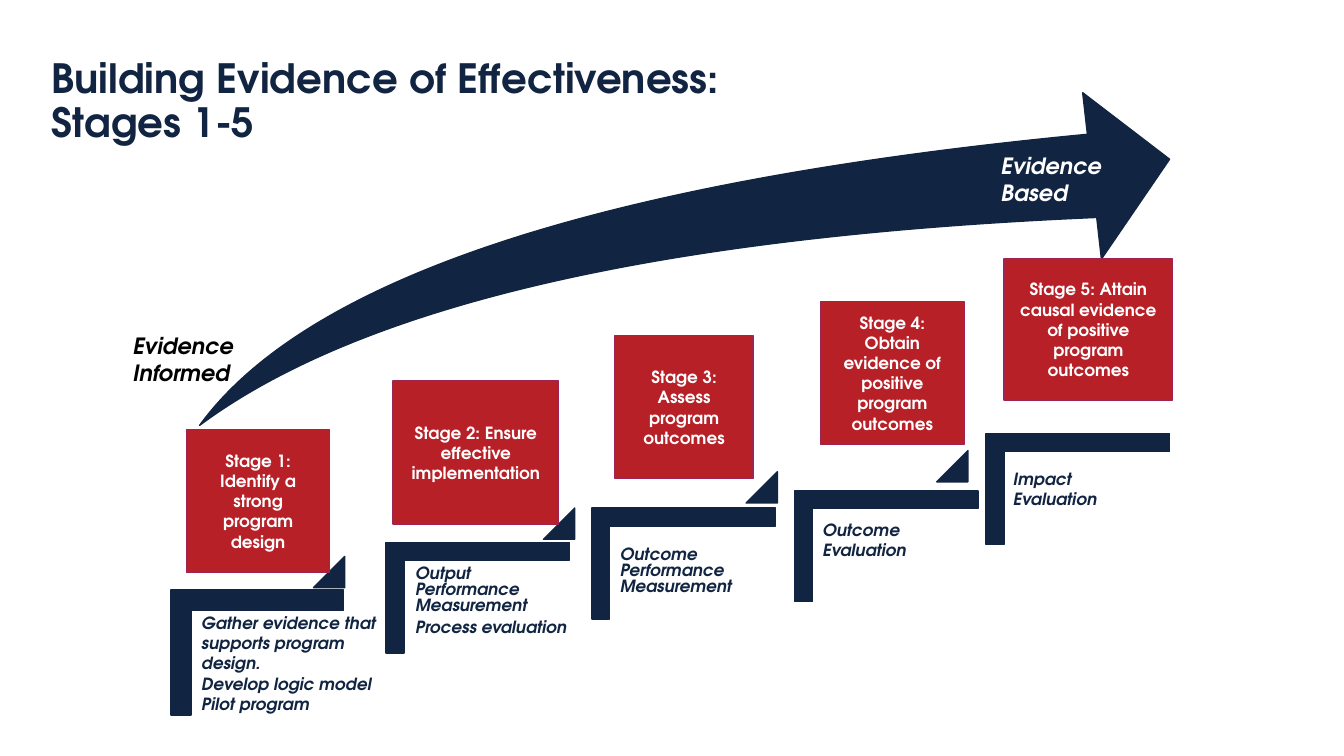
from dataclasses import dataclass

from pptx import Presentation
from pptx import util as u
from pptx.dml.color import RGBColor
from pptx.enum import shapes, text

FONT = "TeX Gyre Adventor"
NAVY, RED, PLUM, WHITE, BLACK = "112441", "B82028", "9E2452", "FFFFFF", "000000"
ARROW_SIZE = 0.31
Frame = tuple[float, float, float, float]


@dataclass
class Stage:
    caption: str
    box: Frame
    step: Frame  # before the quarter turn
    methods: tuple[str, ...]
    methods_frame: Frame
    arrow: tuple[float, float] | None = None
    compact: bool = False


@dataclass
class Label:
    words: str
    frame: Frame
    color: str


STAGES = (
    Stage("Stage 1: Identify a strong program design", (1.85, 4.26, 1.42, 1.42),
          (1.93, 5.62, 1.24, 1.71),
          ("Gather evidence that supports program design.", "Develop logic model",
           "Pilot program"),
          (1.9, 6.03, 1.95, 1.11), (3.11, 5.52)),
    Stage("Stage 2: Ensure effective implementation", (3.9, 3.78, 1.64, 1.42),
          (4.19, 5.02, 1.1, 1.82),
          ("Output Performance Measurement", "Process evaluation"),
          (4.07, 5.57, 1.63, 1.52), (5.39, 5.04), True),
    Stage("Stage 3: Assess program outcomes", (6.1, 3.33, 1.37, 1.42),
          (6.23, 4.68, 1.1, 1.82),
          ("Outcome Performance Measurement",),
          (6.1, 5.38, 1.65, 1.44), (7.4, 4.68), True),
    Stage("Stage 4: Obtain evidence of positive program outcomes",
          (8.14, 2.99, 1.42, 1.42), (8.24, 4.51, 1.1, 1.82),
          ("Outcome Evaluation",), (8.06, 5.11, 1.26, 0.5), (9.29, 4.47)),
    Stage("Stage 5: Attain causal evidence of positive program outcomes",
          (9.96, 2.57, 1.67, 1.4), (10.14, 3.94, 1.1, 1.82),
          ("Impact Evaluation",), (9.95, 4.6, 1.26, 0.5)),
)
LABELS = (
    Label("Evidence Informed", (1.22, 3.25, 1.27, 0.64), BLACK),
    Label("Evidence Based", (9.83, 1.46, 1.37, 0.64), WHITE),
)


def rgb(color: str) -> RGBColor:
    return RGBColor.from_string(color)


def place(frame: Frame) -> list[u.Length]:
    return [u.Inches(length) for length in frame]


def write(shape, lines: tuple[str, ...], size: float, color: str, italic: bool = False,
          inset: tuple[float, float] = (0.1, 0.05)) -> None:
    frame = shape.text_frame
    frame.word_wrap = True
    frame.margin_left = frame.margin_right = u.Inches(inset[0])
    frame.margin_top = frame.margin_bottom = u.Inches(inset[1])
    frame.text = "\n".join(lines)
    for para in frame.paragraphs:
        font = para.font
        font.name, font.size, font.bold, font.italic = FONT, u.Pt(size), True, italic
        font.color.rgb = rgb(color)


def add_text(page, frame: Frame, lines: tuple[str, ...], size: float, color: str,
             italic: bool = True, inset: tuple[float, float] = (0.1, 0.05)):
    box = page.shapes.add_textbox(*place(frame))
    write(box, lines, size, color, italic, inset)
    return box.text_frame


def add_solid(page, kind, frame: Frame, adjustments: tuple[float, ...] = (),
              fill: str = NAVY, line: str = NAVY):
    shape = page.shapes.add_shape(kind, *place(frame))
    shape.shadow.inherit = False
    shape.fill.solid()
    shape.fill.fore_color.rgb = rgb(fill)
    shape.line.color.rgb = rgb(line)
    shape.line.width = u.Pt(1)
    for index, value in enumerate(adjustments):
        shape.adjustments[index] = value
    return shape


def add_step(page, stage: Stage) -> None:
    step = add_solid(page, shapes.MSO_SHAPE.CORNER, stage.step, (0.161, 0.161))
    step.rotation = 90
    if stage.arrow:
        add_solid(page, shapes.MSO_SHAPE.ISOSCELES_TRIANGLE,
                  (*stage.arrow, ARROW_SIZE, ARROW_SIZE), (1,))


def add_methods(page, stage: Stage) -> None:
    inset = (0.05, 0.05) if stage.compact else (0.1, 0.05)
    frame = add_text(page, stage.methods_frame, stage.methods, 12, NAVY, inset=inset)
    if stage.compact:
        for para in frame.paragraphs:
            para.line_spacing = 0.8
            para.space_after = u.Pt(4.2)


def add_stage_box(page, stage: Stage) -> None:
    box = add_solid(page, shapes.MSO_SHAPE.RECTANGLE, stage.box, fill=RED, line=PLUM)
    write(box, (stage.caption,), 12, WHITE)
    box.text_frame.vertical_anchor = text.MSO_ANCHOR.MIDDLE
    box.text_frame.paragraphs[0].alignment = text.PP_ALIGN.CENTER


def main() -> None:
    deck = Presentation()
    deck.slide_width, deck.slide_height = u.Inches(13.33), u.Inches(7.5)
    page = deck.slides.add_slide(deck.slide_layouts[6])

    title = add_text(page, (0.51, 0.62, 7.05, 0.83),
                     ("Building Evidence of Effectiveness: Stages 1-5",),
                     28.8, NAVY, italic=False, inset=(0, 0))
    title.vertical_anchor = text.MSO_ANCHOR.BOTTOM
    title.paragraphs[0].line_spacing = 0.9

    for stage in STAGES:
        add_step(page, stage)
    add_solid(page, shapes.MSO_SHAPE.SWOOSH_ARROW, (1.98, 0.92, 9.62, 3.3), (0.25, 0.247))
    for stage in STAGES:
        add_methods(page, stage)
        add_stage_box(page, stage)
    for label in LABELS:
        add_text(page, label.frame, (label.words,), 16, label.color)

    deck.save("out.pptx")


if __name__ == "__main__":
    main()
